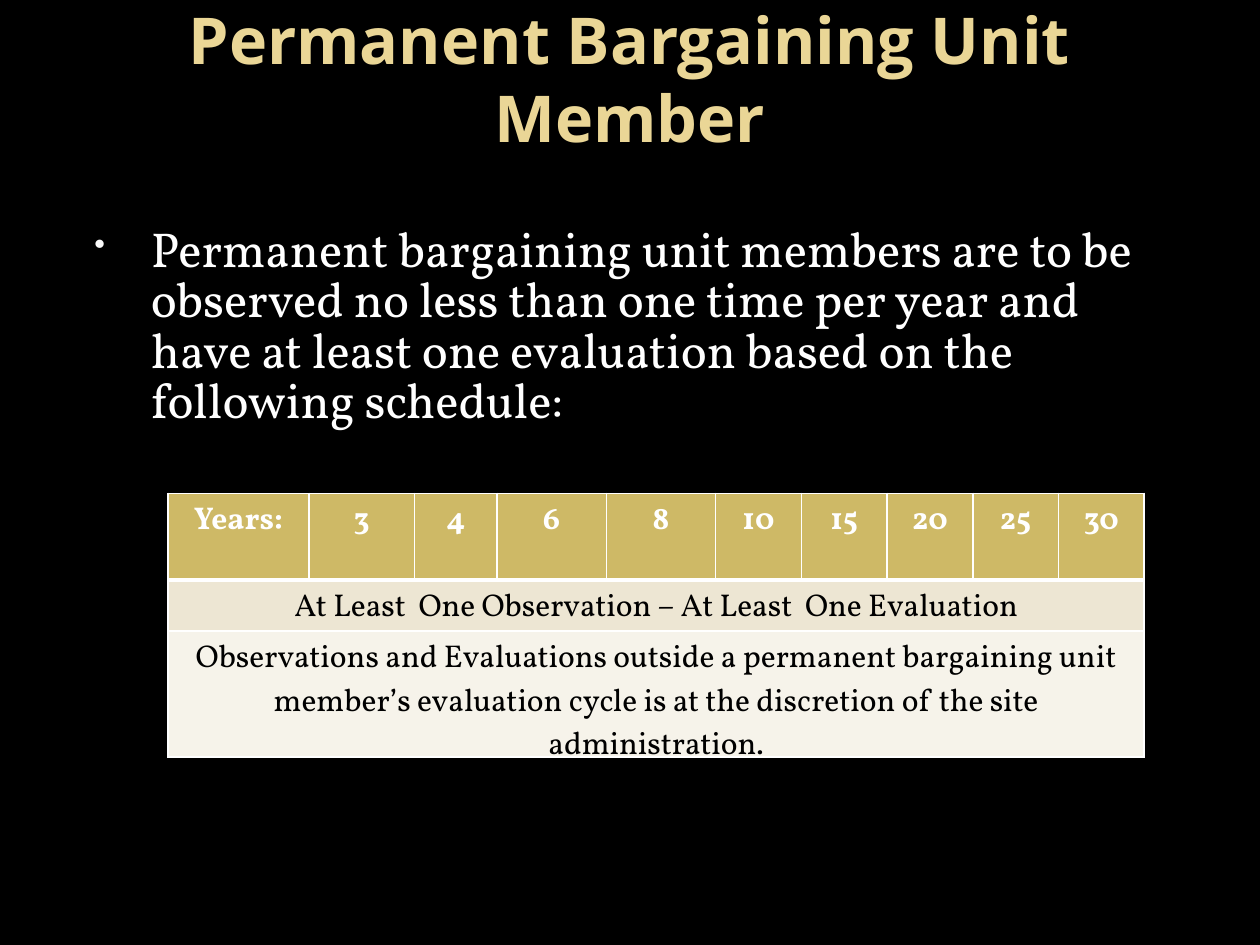
from dataclasses import dataclass

from lxml.etree import SubElement
from pptx import Presentation
from pptx.dml.color import RGBColor as Rgb
from pptx.enum.text import MSO_ANCHOR as Anchor, PP_ALIGN as Align
from pptx.oxml.ns import qn
from pptx.util import Pt


@dataclass(frozen=True)
class Theme:
    background: str = "000000"
    title: str = "EAD696"
    light: str = "FFFFFF"
    dark: str = "000000"
    bullet: str = "F9F9F9"
    header_fill: str = "CEB966"
    title_font: str = "Open Sans"
    body_font: str = "Vollkorn"
    title_size: float = 36.9
    body_size: float = 28
    table_size: float = 18
    thin: float = 1
    thick: float = 3


@dataclass(frozen=True)
class Box:
    left: float
    top: float
    width: float
    height: float

    def lengths(self) -> tuple:
        return Pt(self.left), Pt(self.top), Pt(self.width), Pt(self.height)


@dataclass(frozen=True)
class Year:
    label: str
    width: float


@dataclass(frozen=True)
class Rule:
    text: str
    fill: str
    height: float


THEME = Theme()
YEARS = [Year("Years:", 80.5), Year("3", 60.5), Year("4", 47),
         Year("6", 62.5), Year("8", 62.5),
         *(Year(label, 49) for label in ("10", "15", "20", "25", "30"))]
RULES = [
    Rule("At Least  One Observation – At Least  One Evaluation", "EDE6D3", 29),
    Rule("Observations and Evaluations outside a permanent bargaining unit "
         "member’s evaluation cycle is at the discretion of the site "
         "administration.", "F6F3EA", 47.5),
]
HEADER_HEIGHT = 49.5


def style(paragraph, face: str, size: float, color: str, bold: bool = False) -> None:
    font = paragraph.font
    font.name, font.size, font.bold = face, Pt(size), bold
    font.color.rgb = Rgb.from_string(color)


def add_text(slide, box: Box, text: str):
    frame = slide.shapes.add_textbox(*box.lengths()).text_frame
    frame.word_wrap = True
    frame.text = text
    return frame


def add_bullet(paragraph, left: float, hanging: float) -> None:
    props = paragraph._p.get_or_add_pPr()
    props.set("marL", str(Pt(left)))
    props.set("indent", str(-Pt(hanging)))
    color = SubElement(props, qn("a:buClr"))
    SubElement(color, qn("a:srgbClr"), val=THEME.bullet)
    SubElement(props, qn("a:buSzPct"), val="65000")
    SubElement(props, qn("a:buChar"), char="•")


def add_borders(cell, top: float, bottom: float) -> None:
    props = cell._tc.get_or_add_tcPr()
    widths = {"lnL": THEME.thin, "lnR": THEME.thin, "lnT": top, "lnB": bottom}
    for side, width in widths.items():
        line = SubElement(props, qn(f"a:{side}"), w=str(Pt(width)))
        fill = SubElement(line, qn("a:solidFill"))
        SubElement(fill, qn("a:srgbClr"), val=THEME.light)


def fill_cell(cell, text: str, fill: str, color: str, bold: bool) -> None:
    cell.fill.solid()
    cell.fill.fore_color.rgb = Rgb.from_string(fill)
    cell.text = text
    paragraph = cell.text_frame.paragraphs[0]
    paragraph.alignment = Align.CENTER
    style(paragraph, THEME.body_font, THEME.table_size, color, bold)


def add_schedule(slide, left: float, top: float) -> None:
    heights = [HEADER_HEIGHT, *(rule.height for rule in RULES)]
    box = Box(left, top, sum(year.width for year in YEARS), sum(heights))
    table = slide.shapes.add_table(len(heights), len(YEARS), *box.lengths()).table
    table.horz_banding = False
    for row, height in zip(table.rows, heights):
        row.height = Pt(height)

    # Borders, with a thick line between header and rules
    for index, row in enumerate(table.rows):
        for cell in row.cells:
            add_borders(cell, THEME.thick if index == 1 else THEME.thin,
                        THEME.thick if index == 0 else THEME.thin)

    # Header of years
    for column, year in enumerate(YEARS):
        table.columns[column].width = Pt(year.width)
        fill_cell(table.cell(0, column), year.label, THEME.header_fill, THEME.light, True)

    # Rules that span all years
    for row, rule in enumerate(RULES, start=1):
        first = table.cell(row, 0)
        first.merge(table.cell(row, len(YEARS) - 1))
        fill_cell(first, rule.text, rule.fill, THEME.dark, False)


def main() -> None:
    deck = Presentation()
    deck.slide_width, deck.slide_height = Pt(720), Pt(540)
    slide = deck.slides.add_slide(deck.slide_layouts[6])
    slide.background.fill.solid()
    slide.background.fill.fore_color.rgb = Rgb.from_string(THEME.background)

    # Title, raised by a deep bottom margin
    title = add_text(slide, Box(36, 21.6, 648, 90), "Permanent Bargaining Unit Member")
    title.vertical_anchor = Anchor.MIDDLE
    title.margin_bottom = Pt(48)
    heading = title.paragraphs[0]
    heading.alignment = Align.CENTER
    style(heading, THEME.title_font, THEME.title_size, THEME.title, True)

    # Observation requirement
    requirement = add_text(
        slide, Box(36, 126, 648, 370.8),
        "Permanent bargaining unit members are to be observed no less than one "
        "time per year and have at least one evaluation based on the following "
        "schedule:").paragraphs[0]
    requirement.line_spacing = 0.86
    requirement.space_before = Pt(6.5)
    add_bullet(requirement, left=43.2, hanging=32.4)
    style(requirement, THEME.body_font, THEME.body_size, THEME.light)

    # Evaluation schedule
    add_schedule(slide, left=96, top=282)
    deck.save("out.pptx")


if __name__ == "__main__":
    main()
